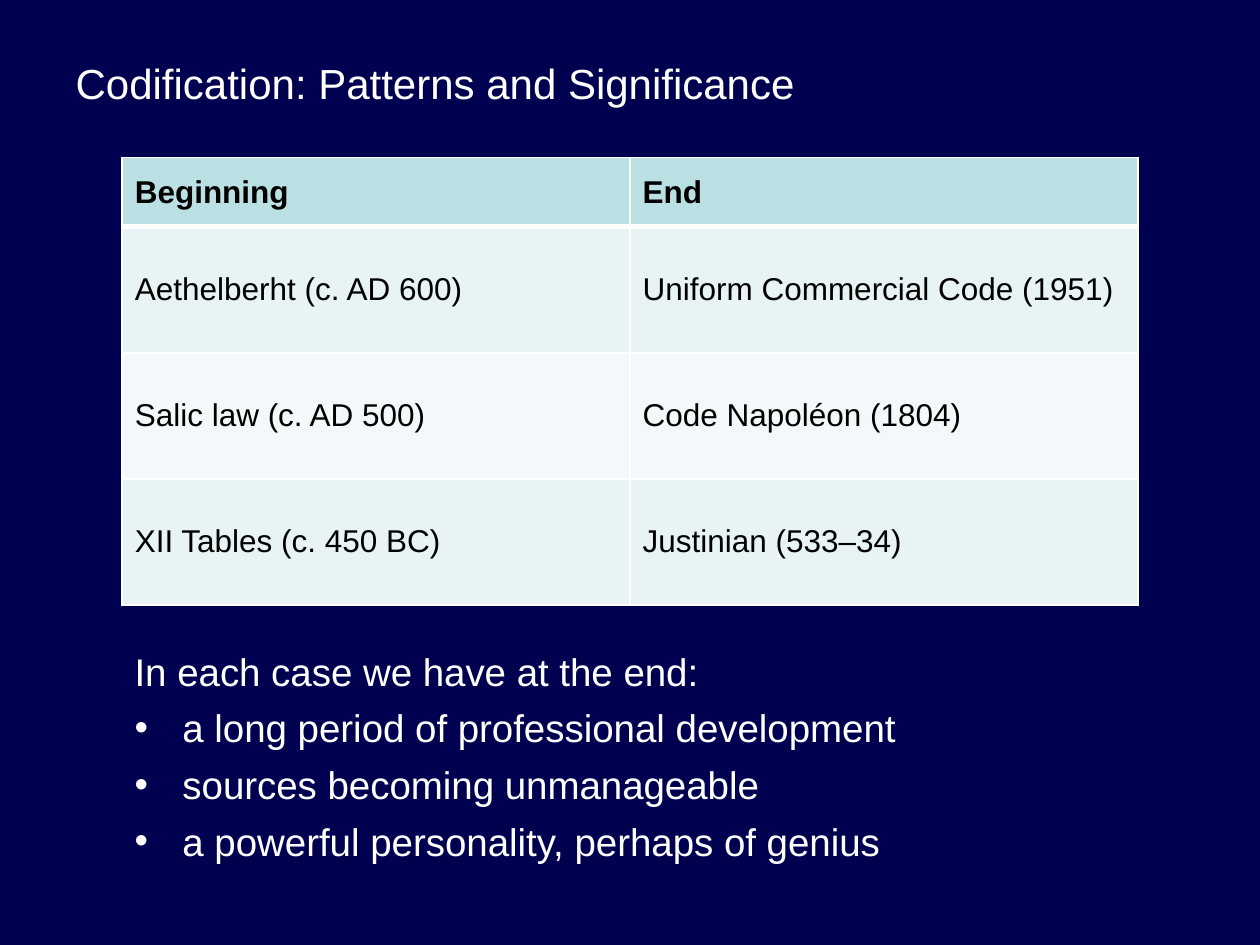
from lxml.etree import SubElement
from pptx import Presentation
from pptx.dml.color import RGBColor
from pptx.enum.text import MSO_ANCHOR, PP_ALIGN
from pptx.oxml.ns import qn
from pptx.util import Inches, Pt

NAVY = RGBColor(0x00, 0x00, 0x50)
WHITE = RGBColor(0xFF, 0xFF, 0xFF)
BLACK = RGBColor(0x00, 0x00, 0x00)
TEAL = RGBColor(0xBB, 0xE0, 0xE3)
PALE = RGBColor(0xE7, 0xF3, 0xF4)
FAINT = RGBColor(0xF3, 0xF9, 0xFA)

CODES = [
    ("Beginning", "End"),
    ("Aethelberht (c. AD 600)", "Uniform Commercial Code (1951)"),
    ("Salic law (c. AD 500)", "Code Napoléon (1804)"),
    ("XII Tables (c. 450 BC)", "Justinian (533–34)"),
]
LEAD = "In each case we have at the end:"
POINTS = [
    "a long period of professional development",
    "sources becoming unmanageable",
    "a powerful personality, perhaps of genius",
]


def style(para, size, color, bold=False):
    font = para.font
    font.name, font.size, font.bold = "Arial", Pt(size), bold
    font.color.rgb = color
    para.alignment = PP_ALIGN.LEFT


def add_title(slide, text):
    title = slide.shapes.title
    title.left, title.top = Inches(0.5), Inches(0.41)
    title.width, title.height = Inches(9), Inches(1.25)
    title.text_frame.text = text
    title.text_frame.vertical_anchor = MSO_ANCHOR.TOP
    style(title.text_frame.paragraphs[0], 24, WHITE)


def add_borders(cell, foot):
    """Draw white cell borders; foot is the bottom width in points."""
    props = cell._tc.get_or_add_tcPr()
    sides = [("lnL", 1), ("lnR", 1), ("lnT", 1), ("lnB", foot)]
    for index, (side, width) in enumerate(sides):
        line = SubElement(props, qn(f"a:{side}"), w=str(Pt(width)))
        fill = SubElement(line, qn("a:solidFill"))
        SubElement(fill, qn("a:srgbClr"), val=str(WHITE))
        props.insert(index, line)


def add_codes(slide):
    frame = slide.shapes.add_table(
        len(CODES), 2, Inches(0.97), Inches(1.25), Inches(8.06), Inches(3.55))
    table = frame.table
    for r, texts in enumerate(CODES):
        head = r == 0
        table.rows[r].height = Inches(0.55 if head else 1)
        shade = TEAL if head else PALE if r % 2 else FAINT
        for c, text in enumerate(texts):
            cell = table.cell(r, c)
            cell.text = text
            cell.vertical_anchor = MSO_ANCHOR.MIDDLE
            cell.fill.solid()
            cell.fill.fore_color.rgb = shade
            style(cell.text_frame.paragraphs[0], 18, BLACK, head)
            add_borders(cell, 3 if head else 1)
    for c in range(2):
        table.cell(1, c)._tc.tcPr.find(qn("a:lnT")).set("w", str(Pt(3)))


def add_bullet(para):
    props = para._p.get_or_add_pPr()
    props.set("marL", str(Inches(0.38)))
    props.set("indent", str(Inches(-0.38)))
    SubElement(props, qn("a:buFont"), typeface="Arial")
    SubElement(props, qn("a:buChar"), char="•")
    # Bullets must come before the default run properties.
    props.append(props.find(qn("a:defRPr")))


def add_points(slide):
    box = slide.shapes.add_textbox(
        Inches(0.97), Inches(5.09), Inches(8.33), Inches(1.79))
    frame = box.text_frame
    frame.word_wrap = True
    frame.text = "\n".join([LEAD, *POINTS])
    for para in frame.paragraphs:
        style(para, 22, WHITE)
        para.space_before, para.space_after = Pt(1), Pt(5)
    for para in frame.paragraphs[1:]:
        add_bullet(para)


def main():
    deck = Presentation()
    deck.slide_width, deck.slide_height = Inches(10), Inches(7.5)
    slide = deck.slides.add_slide(deck.slide_layouts[5])
    slide.background.fill.solid()
    slide.background.fill.fore_color.rgb = NAVY
    add_title(slide, "Codification: Patterns and Significance")
    add_codes(slide)
    add_points(slide)
    deck.save("out.pptx")


if __name__ == "__main__":
    main()
